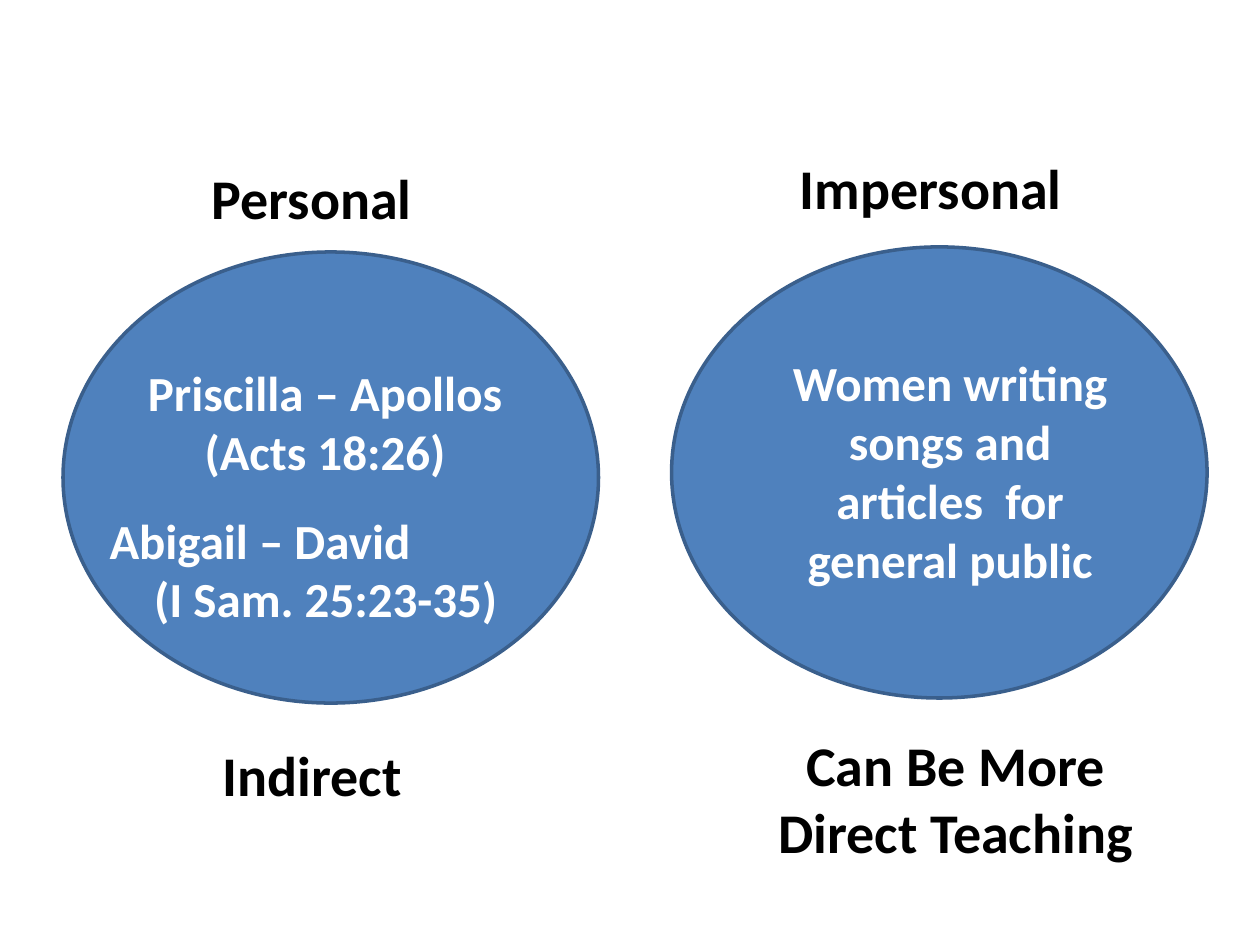
import dataclasses

import pptx
import pptx.dml.color
import pptx.enum.shapes
import pptx.enum.text
import pptx.util

Inches = pptx.util.Inches
Pt = pptx.util.Pt
Align = pptx.enum.text.PP_ALIGN


def rgb(code):
    return pptx.dml.color.RGBColor.from_string(code)


@dataclasses.dataclass(frozen=True)
class Theme:
    font: str = "Calibri"
    fill: str = "4F81BD"
    edge: str = "3A5F8C"
    dark: str = "000000"
    light: str = "FFFFFF"
    head: int = 32
    body: int = 28
    line: int = 2


class Deck:
    """Holds the theme and the current slide."""

    def __init__(self, theme):
        self.theme = theme
        self.file = pptx.Presentation()
        self.file.slide_width = Inches(10)
        self.file.slide_height = Inches(7.5)
        self.slide = self.file.slides.add_slide(self.file.slide_layouts[6])

    def oval(self, left, top):
        kind = pptx.enum.shapes.MSO_SHAPE.OVAL
        shape = self.slide.shapes.add_shape(
            kind, Inches(left), Inches(top), Inches(4.25), Inches(3.58))
        shape.shadow.inherit = False
        shape.fill.solid()
        shape.fill.fore_color.rgb = rgb(self.theme.fill)
        shape.line.color.rgb = rgb(self.theme.edge)
        shape.line.width = Pt(self.theme.line)

    def text(self, box, lines, size, color):
        """Adds a text box; each line is a pair of wording and alignment."""
        shape = self.slide.shapes.add_textbox(*map(Inches, box))
        frame = shape.text_frame
        frame.word_wrap = True
        frame.auto_size = pptx.enum.text.MSO_AUTO_SIZE.SHAPE_TO_FIT_TEXT
        for i, (words, align) in enumerate(lines):
            para = frame.add_paragraph() if i else frame.paragraphs[0]
            para.alignment = align
            run = para.add_run()
            run.text = words
            run.font.name = self.theme.font
            run.font.size = Pt(size)
            run.font.bold = True
            run.font.color.rgb = rgb(color)
        return frame

    def label(self, box, words, align=Align.LEFT):
        self.text(box, [(words, align)], self.theme.head, self.theme.dark)

    def note(self, box, *lines):
        return self.text(box, lines, self.theme.body, self.theme.light)


def main():
    deck = Deck(Theme())

    deck.oval(0.5, 2)
    deck.label((1.58, 1.25, 1.92, 0.64), "Personal")
    deck.label((1.67, 5.83, 1.83, 0.64), "Indirect")
    deck.note((0.83, 2.83, 3.5, 1.04),
              ("Priscilla – Apollos (Acts 18:26)", Align.CENTER))
    verse = deck.note((0.67, 4, 3.83, 1.04),
                      ("Abigail – David", Align.LEFT),
                      ("(I Sam. 25:23-35)", Align.CENTER))
    verse.margin_left = verse.margin_right = Inches(0.2)

    deck.oval(5.33, 1.96)
    deck.label((6.25, 1.17, 2.67, 0.64), "Impersonal")
    deck.label((5.92, 5.75, 3.33, 1.18),
               "Can Be More Direct Teaching", Align.CENTER)
    deck.note((6.08, 2.75, 2.92, 1.99),
              ("Women writing songs and articles  for general public",
               Align.CENTER))

    deck.file.save("out.pptx")


if __name__ == "__main__":
    main()
